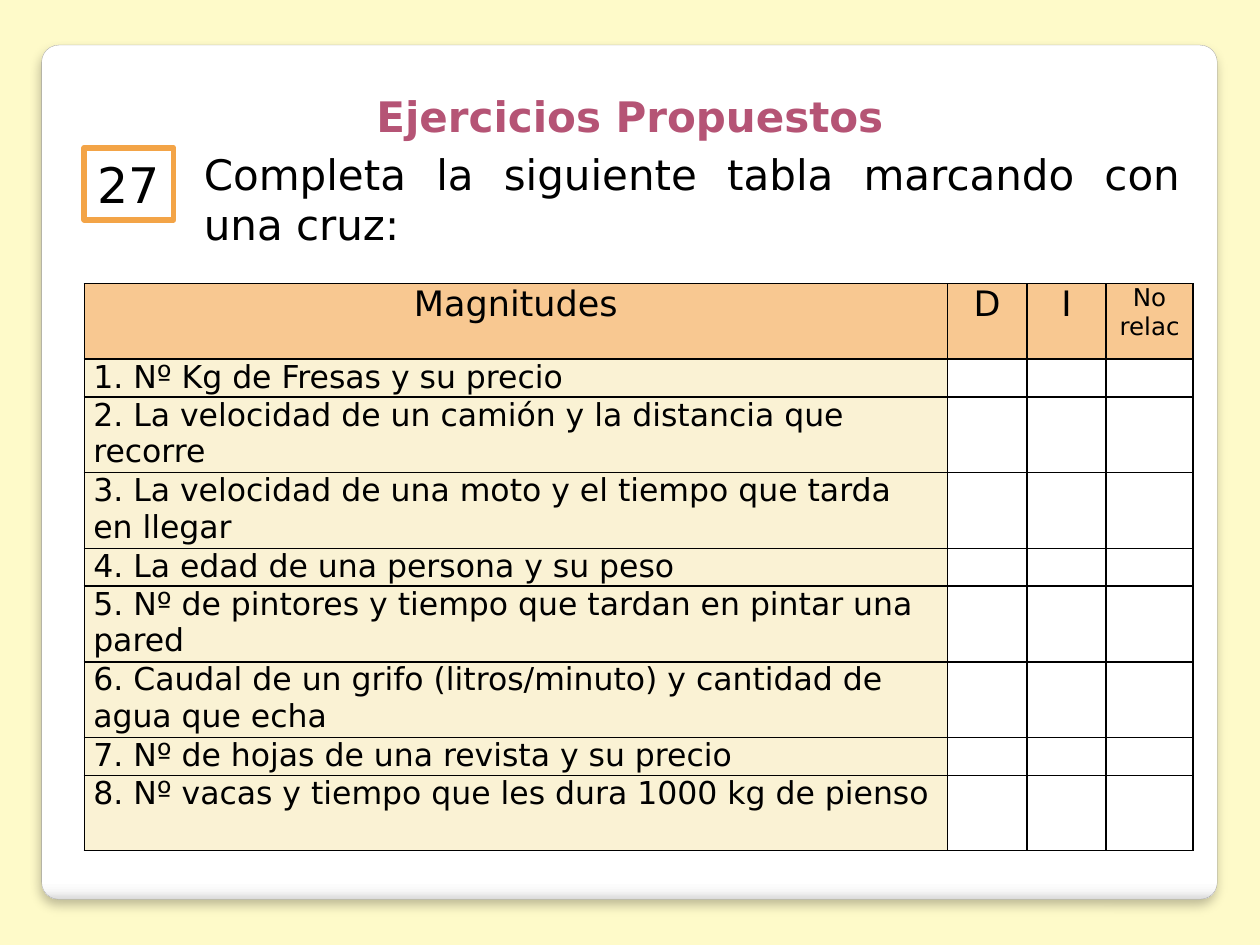
import pptx
import pptx.util
import pptx.dml.color
import pptx.enum.shapes
import pptx.enum.text
import pptx.oxml
import pptx.oxml.ns

Cm, Pt = pptx.util.Cm, pptx.util.Pt
ALIGN = pptx.enum.text.PP_ALIGN
SHAPE = pptx.enum.shapes.MSO_SHAPE
NAMESPACE = pptx.oxml.ns.nsdecls("a")


def color(value):
    return pptx.dml.color.RGBColor.from_string(value)


def write(frame, text, size, alignment, text_color="000000", bold=False):
    paragraph = frame.paragraphs[0]
    paragraph.text = text
    paragraph.alignment = alignment
    paragraph.font.name = "DejaVu Sans"
    paragraph.font.size = Pt(size)
    paragraph.font.bold = bold
    paragraph.font.color.rgb = color(text_color)


presentation = pptx.Presentation()
presentation.slide_width = Cm(25.4)
presentation.slide_height = Cm(19.05)
slide = presentation.slides.add_slide(presentation.slide_layouts[6])
slide.background.fill.solid()
slide.background.fill.fore_color.rgb = color("FEFAC9")

# White card with a darker lower edge and a soft shadow
card = slide.shapes.add_shape(SHAPE.ROUNDED_RECTANGLE, Cm(0.84), Cm(0.91), Cm(23.7), Cm(17.22))
card.adjustments[0] = 0.02
stops = "".join(
    f'<a:gs pos="{position * 1000}"><a:srgbClr val="{value}"/></a:gs>'
    for position, value in [(0, "FFFFFF"), (98, "FFFFFF"), (99, "F7F7F7"), (100, "DADADA")]
)
card_properties = card.element.spPr
card_properties.append(pptx.oxml.parse_xml(
    f'<a:gradFill {NAMESPACE}><a:gsLst>{stops}</a:gsLst><a:lin ang="5400000" scaled="0"/></a:gradFill>'
))
card.line.color.rgb = color("A4A4A4")
card.line.width = Pt(0.16)
card_properties.append(pptx.oxml.parse_xml(
    f'<a:effectLst {NAMESPACE}><a:outerShdw blurRad="{Pt(6)}" dist="{Pt(4)}" dir="5400000" rotWithShape="0">'
    '<a:srgbClr val="000000"><a:alpha val="25000"/></a:srgbClr></a:outerShdw></a:effectLst>'
))

# Title
title = slide.shapes.add_textbox(Cm(0.99), Cm(1.7), Cm(23.42), Cm(1.27))
title.text_frame.word_wrap = True
write(title.text_frame, "Ejercicios Propuestos", 24, ALIGN.CENTER, "B55475", True)

# Exercise number
number = slide.shapes.add_shape(SHAPE.RECTANGLE, Cm(1.7), Cm(2.98), Cm(1.8), Cm(1.45))
number.shadow.inherit = False
number.fill.solid()
number.fill.fore_color.rgb = color("FFFFFF")
number.line.color.rgb = color("F3A447")
number.line.width = Pt(3.35)
number.text_frame.word_wrap = False
write(number.text_frame, "27", 28, ALIGN.CENTER)

# Instruction
instruction = slide.shapes.add_textbox(Cm(3.86), Cm(2.87), Cm(20.19), Cm(2.31))
instruction.fill.solid()
instruction.fill.fore_color.rgb = color("FFFFFF")
instruction.text_frame.word_wrap = True
write(instruction.text_frame, "Completa la siguiente tabla marcando con una cruz:", 24, ALIGN.JUSTIFY)

# Table: heading row, then one row per pair of magnitudes
headings = [("Magnitudes", 20), ("D", 20), ("I", 20), ("No relac", 14)]
questions = [
    "1. Nº Kg de Fresas y su precio",
    "2. La velocidad de un camión y la distancia que recorre",
    "3. La velocidad de una moto y el tiempo que tarda en llegar",
    "4. La edad de una persona y su peso",
    "5. Nº de pintores y tiempo que tardan en pintar una pared",
    "6. Caudal de un grifo (litros/minuto) y cantidad de agua que echa",
    "7. Nº de hojas de una revista y su precio",
    "8. Nº vacas y tiempo que les dura 1000 kg de pienso",
]
column_widths = [17.4, 1.6, 1.6, 1.75]
single_rows = {1, 4, 7}

table = slide.shapes.add_table(
    len(questions) + 1, len(headings), Cm(1.7), Cm(5.72), Cm(22.35), Cm(11.43)
).table
table.first_row = table.horz_banding = False
for column, width in zip(table.columns, column_widths):
    column.width = Cm(width)

for row_index, row in enumerate(table.rows):
    row.height = Cm(0.76 if row_index in single_rows else 1.52)
    for column_index, cell in enumerate(row.cells):
        cell.margin_left = cell.margin_right = Cm(0.18)
        cell.margin_top = cell.margin_bottom = 0
        for side in ("lnL", "lnR", "lnT", "lnB"):
            cell._tc.get_or_add_tcPr().append(pptx.oxml.parse_xml(
                f'<a:{side} {NAMESPACE} w="{Pt(1)}"><a:solidFill><a:srgbClr val="000000"/></a:solidFill></a:{side}>'
            ))
        if row_index == 0:
            text, size = headings[column_index]
            write(cell.text_frame, text, size, ALIGN.CENTER)
            fill_color = "F8C891"
        elif column_index == 0:
            write(cell.text_frame, questions[row_index - 1], 18, ALIGN.LEFT)
            fill_color = "FAF2D4"
        else:
            cell.text_frame.paragraphs[0].font.size = Pt(18)
            cell.fill.background()
            continue
        cell.fill.solid()
        cell.fill.fore_color.rgb = color(fill_color)

presentation.save("out.pptx")
